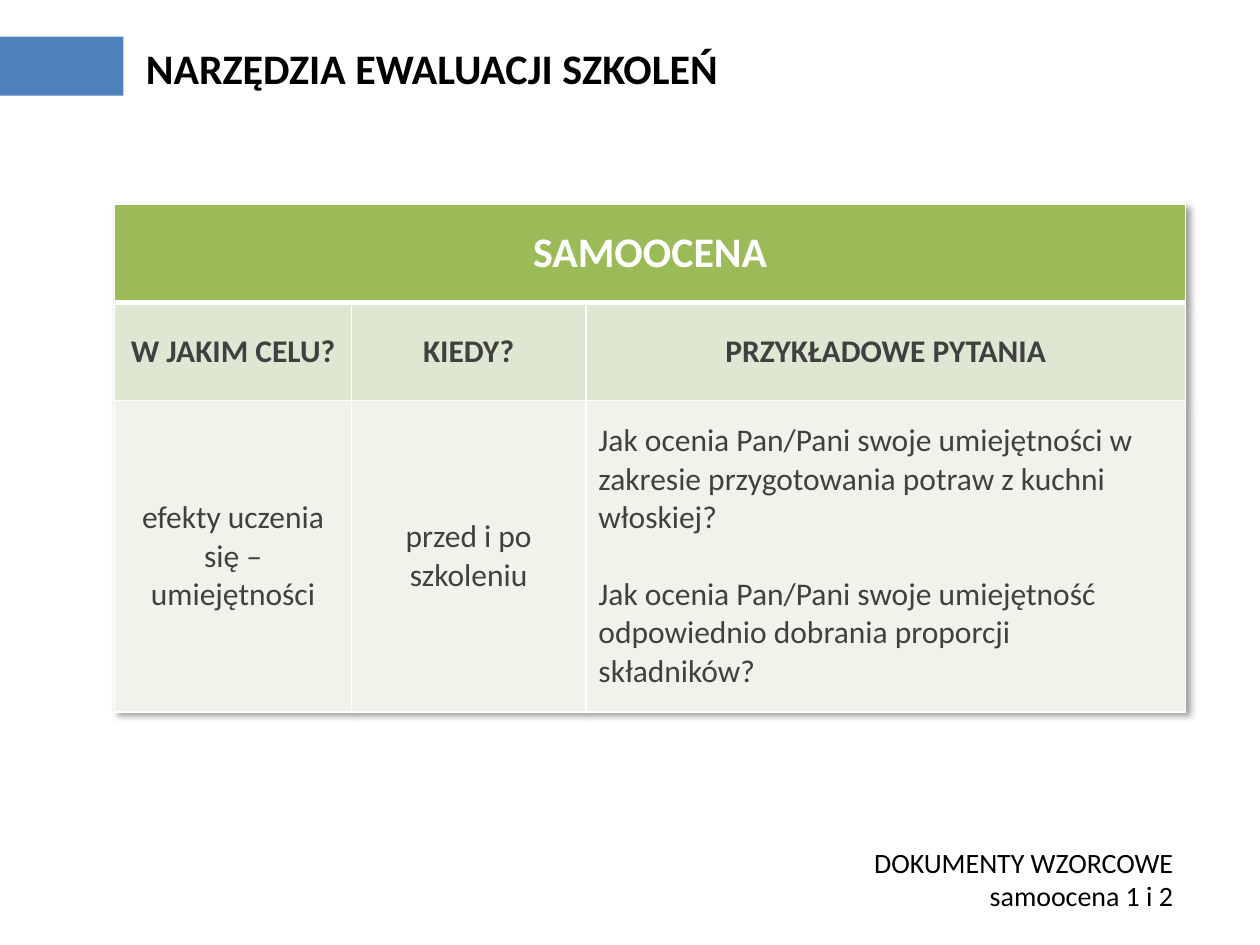
from lxml.etree import SubElement
from pptx import Presentation
from pptx.dml.color import RGBColor
from pptx.enum.shapes import MSO_SHAPE
from pptx.enum.text import MSO_ANCHOR, MSO_AUTO_SIZE, PP_ALIGN
from pptx.oxml import parse_xml
from pptx.oxml.ns import nsdecls, qn
from pptx.util import Inches, Pt

WIDTH, HEIGHT = Inches(10), Inches(7.5)
COLS, ROWS = 100, 75
FONT = "Calibri"
BLACK = RGBColor(0, 0, 0)
WHITE = RGBColor(255, 255, 255)
GRAY = RGBColor(0x40, 0x40, 0x40)
BLUE = RGBColor(0x4F, 0x81, 0xBD)
GREEN = RGBColor(0x9B, 0xBB, 0x59)
GREEN_LIGHT = RGBColor(0xDE, 0xE7, 0xD1)
GREEN_PALE = RGBColor(0xEF, 0xF3, 0xEA)

COLUMN_WIDTHS = [18.8, 18.6, 47.6]
ROW_HEIGHTS = [7.8, 7.8, 24.7]
HEADINGS = ["W JAKIM CELU?", "KIEDY?", "PRZYKŁADOWE PYTANIA"]
ANSWERS = ["efekty uczenia się – umiejętności", "przed i po szkoleniu"]
QUESTIONS = (
    "Jak ocenia Pan/Pani swoje umiejętności w zakresie przygotowania potraw z kuchni włoskiej?\n"
    "Jak ocenia Pan/Pani swoje umiejętność odpowiednio dobrania proporcji składników?"
)


def across(cols):
    return round(WIDTH * cols / COLS)


def down(rows):
    return round(HEIGHT * rows / ROWS)


def place(left, top, width, height):
    return across(left), down(top), across(width), down(height)


def write(tf, text, size, color, bold=False, align=PP_ALIGN.LEFT):
    tf.text = text
    for p in tf.paragraphs:
        p.alignment = align
        for r in p.runs:
            r.font.name, r.font.size, r.font.bold = FONT, Pt(size), bold
            r.font.color.rgb = color


def add_bar(s, box, color):
    sp = s.shapes.add_shape(MSO_SHAPE.RECTANGLE, *box)
    sp.shadow.inherit = False
    sp.fill.solid()
    sp.fill.fore_color.rgb = color
    sp.line.fill.background()


def add_label(s, box, text, size, **style):
    tf = s.shapes.add_textbox(*box).text_frame
    tf.word_wrap = False
    tf.auto_size = MSO_AUTO_SIZE.SHAPE_TO_FIT_TEXT
    write(tf, text, size, BLACK, **style)


def set_borders(cell, bottom):
    tc_pr = cell._tc.get_or_add_tcPr()
    for i, (side, width) in enumerate(zip("LRTB", (1, 1, 1, bottom))):
        ln = parse_xml(f'<a:ln{side} {nsdecls("a")} w="{Pt(width)}"/>')
        fill = SubElement(ln, qn("a:solidFill"))
        SubElement(fill, qn("a:srgbClr"), val=str(WHITE))
        tc_pr.insert(i, ln)


def fill_cell(cell, text, size, color, fill, bottom=1, **style):
    cell.vertical_anchor = MSO_ANCHOR.MIDDLE
    cell.fill.solid()
    cell.fill.fore_color.rgb = fill
    set_borders(cell, bottom)
    write(cell.text_frame, text, size, color, **style)


def add_table_shadow(table):
    table._tbl.tblPr.insert(0, parse_xml(
        f'<a:effectLst {nsdecls("a")}><a:outerShdw blurRad="50800" dist="38100" '
        'dir="2700000" algn="tl" rotWithShape="0"><a:srgbClr val="000000">'
        '<a:alpha val="40000"/></a:srgbClr></a:outerShdw></a:effectLst>'))


def add_evaluation_table(s, left, top):
    box = place(left, top, sum(COLUMN_WIDTHS), sum(ROW_HEIGHTS))
    table = s.shapes.add_table(len(ROW_HEIGHTS), len(COLUMN_WIDTHS), *box).table
    for column, width in zip(table.columns, COLUMN_WIDTHS):
        column.width = across(width)
    for row, height in zip(table.rows, ROW_HEIGHTS):
        row.height = down(height)
    add_table_shadow(table)

    center = PP_ALIGN.CENTER
    table.cell(0, 0).merge(table.cell(0, 2))
    fill_cell(table.cell(0, 0), "SAMOOCENA", 24, WHITE, GREEN, bottom=3, bold=True, align=center)
    for i, heading in enumerate(HEADINGS):
        fill_cell(table.cell(1, i), heading, 18, GRAY, GREEN_LIGHT, bold=True, align=center)
    for i, answer in enumerate(ANSWERS):
        fill_cell(table.cell(2, i), answer, 18, GRAY, GREEN_PALE, align=center)
    questions = table.cell(2, 2)
    fill_cell(questions, QUESTIONS, 18, GRAY, GREEN_PALE)
    questions.text_frame.paragraphs[1].space_before = Pt(22)


def main():
    prs = Presentation()
    prs.slide_width, prs.slide_height = WIDTH, HEIGHT
    s = prs.slides.add_slide(prs.slide_layouts[6])
    add_bar(s, place(0, 2.9, 9.8, 4.7), BLUE)
    add_evaluation_table(s, 9.1, 16.2)
    add_label(s, place(10.6, 2.9, 47.8, 5), "NARZĘDZIA EWALUACJI SZKOLEŃ", 24, bold=True)
    add_label(s, place(68, 66.6, 26.1, 6.4), "DOKUMENTY WZORCOWE\nsamoocena 1 i 2", 16,
              align=PP_ALIGN.RIGHT)
    prs.save("out.pptx")


if __name__ == "__main__":
    main()
